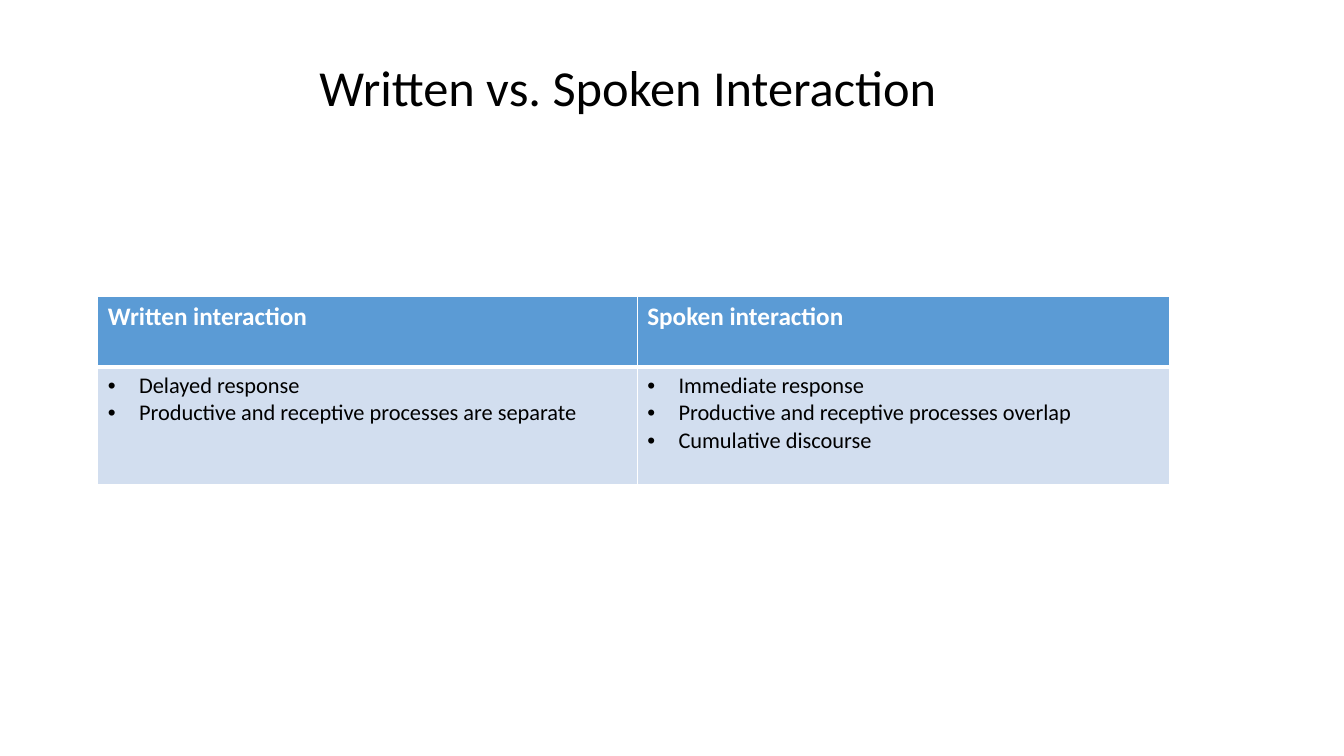
from lxml.etree import SubElement
from pptx import Presentation
from pptx.dml.color import RGBColor
from pptx.enum.text import MSO_ANCHOR, MSO_AUTO_SIZE, PP_ALIGN
from pptx.oxml.ns import qn
from pptx.util import Inches, Pt

WIDTH, HEIGHT = 13.33, 7.5
LEFT, TABLE_WIDTH = 0.97, 10.63
COLUMN_WIDTHS = (5.35, 5.28)
ROW_HEIGHTS = (0.7, 1.17)
BULLET_INDENT = Inches(0.31)

TITLE_FORMAT = {"name": "Calibri", "size": Pt(36), "bold": False, "color": "000000"}
HEADER_FORMAT = {"name": "Calibri", "size": Pt(18), "bold": True, "color": "FFFFFF"}
BODY_FORMAT = {"name": "Calibri", "size": Pt(16), "bold": False, "color": "000000"}

COLUMNS = {
    "Written interaction": [
        "Delayed response",
        "Productive and receptive processes are separate",
    ],
    "Spoken interaction": [
        "Immediate response",
        "Productive and receptive processes overlap",
        "Cumulative discourse",
    ],
}


def set_color(color_format, color):
    color_format.rgb = RGBColor.from_string(color)


def format_font(font, values):
    for name, value in values.items():
        if name == "color":
            set_color(font.color, value)
        else:
            setattr(font, name, value)


def add_bullet(paragraph):
    properties = paragraph._p.get_or_add_pPr()
    properties.set("marL", str(BULLET_INDENT))
    properties.set("indent", str(-BULLET_INDENT))
    SubElement(properties, qn("a:buFont"), typeface="Arial")
    SubElement(properties, qn("a:buChar"), char="•")


def set_borders(cell, widths, color="FFFFFF"):
    properties = cell._tc.get_or_add_tcPr()
    for index, (side, width) in enumerate(widths.items()):
        line = properties.makeelement(qn(f"a:ln{side}"), {"w": str(Pt(width))})
        fill = SubElement(line, qn("a:solidFill"))
        SubElement(fill, qn("a:srgbClr"), val=color)
        properties.insert(index, line)


def fill_cell(cell, lines, values, color, widths, bulleted=False):
    cell.fill.solid()
    set_color(cell.fill.fore_color, color)
    set_borders(cell, widths)
    cell.text = "\n".join(lines)
    for paragraph in cell.text_frame.paragraphs:
        if bulleted:
            add_bullet(paragraph)
        for run in paragraph.runs:
            format_font(run.font, values)


def add_title(slide, text):
    title = slide.shapes.title
    box = {"left": LEFT, "top": 0.31, "width": TABLE_WIDTH, "height": 0.9}
    for name, value in box.items():
        setattr(title, name, Inches(value))
    frame = title.text_frame
    frame.text = text
    frame.auto_size = MSO_AUTO_SIZE.NONE
    frame.vertical_anchor = MSO_ANCHOR.BOTTOM
    paragraph = frame.paragraphs[0]
    paragraph.alignment = PP_ALIGN.CENTER
    format_font(paragraph.runs[0].font, TITLE_FORMAT)


def add_comparison(slide):
    table = slide.shapes.add_table(
        len(ROW_HEIGHTS), len(COLUMNS), Inches(LEFT), Inches(2.94),
        Inches(TABLE_WIDTH), Inches(sum(ROW_HEIGHTS))).table
    for column, width in zip(table.columns, COLUMN_WIDTHS):
        column.width = Inches(width)
    for row, height in zip(table.rows, ROW_HEIGHTS):
        row.height = Inches(height)

    # One heading and one bulleted list per column
    for index, (heading, points) in enumerate(COLUMNS.items()):
        fill_cell(table.cell(0, index), [heading], HEADER_FORMAT, "5B9BD5",
                  {"L": 1, "R": 1, "T": 1, "B": 3})
        fill_cell(table.cell(1, index), points, BODY_FORMAT, "D2DEEF",
                  {"L": 1, "R": 1, "T": 3, "B": 1}, bulleted=True)


def main():
    presentation = Presentation()
    presentation.slide_width = Inches(WIDTH)
    presentation.slide_height = Inches(HEIGHT)
    slide = presentation.slides.add_slide(presentation.slide_layouts[5])
    add_title(slide, "Written vs. Spoken Interaction ")
    add_comparison(slide)
    presentation.save("out.pptx")


if __name__ == "__main__":
    main()
